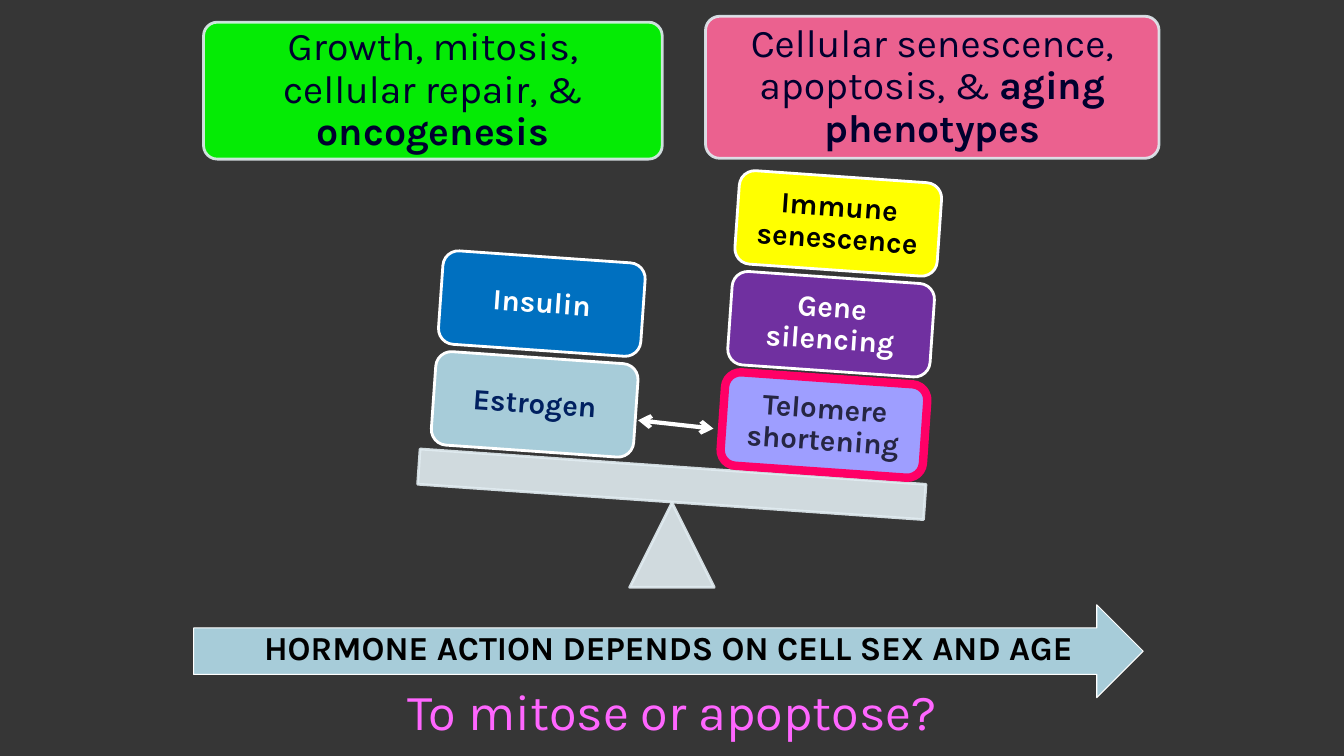
from lxml import etree
from pptx import Presentation
from pptx.dml.color import RGBColor
from pptx.enum.shapes import MSO_CONNECTOR as Link, MSO_SHAPE as Kind
from pptx.enum.text import MSO_ANCHOR as Anchor, PP_ALIGN as Align
from pptx.oxml.ns import qn
from pptx.util import Cm, Pt

FONT = "Karla"
WHITE, PALE, BLUE, NAVY = "FFFFFF", "E1ECF1", "A7CCD9", "00002E"
TILT = 4


def color(text):
    return RGBColor.from_string(text)


class Board:
    def __init__(self, deck, back):
        self.slide = deck.slides.add_slide(deck.slide_layouts[6])
        self.shapes = self.slide.shapes
        fill = self.slide.background.fill
        fill.solid()
        fill.fore_color.rgb = color(back)

    def shape(self, kind, box, fill, line=WHITE, width=2, turn=0, alpha=100):
        item = self.shapes.add_shape(kind, *map(Cm, box))
        item.shadow.inherit = False
        item.rotation = turn
        item.fill.solid()
        item.fill.fore_color.rgb = color(fill)
        item.line.color.rgb = color(line)
        item.line.width = Pt(width)
        if alpha < 100:
            for tone in item.element.spPr.iter(qn("a:srgbClr")):
                etree.SubElement(tone, qn("a:alpha"), val=str(alpha * 1000))
        return item

    def fit(self, item, text, size, ink, bold=False, tail="", pad=None):
        """Centre text in a shape; tail is a closing run in bold."""
        frame = item.text_frame
        frame.word_wrap = True
        para = frame.paragraphs[0]
        para.alignment = Align.CENTER
        font = para.font
        font.name, font.size, font.bold = FONT, Pt(size), bold
        font.color.rgb = color(ink)
        para.add_run().text = text
        if tail:
            run = para.add_run()
            run.text = tail
            run.font.bold = True
        if pad is not None:
            frame.vertical_anchor = Anchor.MIDDLE
            para.line_spacing = 0.9
            frame.margin_left = frame.margin_right = Cm(pad)
            frame.margin_top = frame.margin_bottom = Cm(pad)

    def panel(self, box, fill, text, tail):
        item = self.shape(Kind.ROUNDED_RECTANGLE, box, fill, PALE, alpha=90)
        item.adjustments[0] = 0.1
        self.fit(item, text, 28, NAVY, tail=tail, pad=0.3)

    def stack(self, left, top, blocks):
        """Pile tilted blocks upwards from the lowest one."""
        for step, (text, fill, ink, line, width) in enumerate(blocks):
            box = left + 0.18 * step, top - 2.54 * step, 5.11, 2.36
            item = self.shape(Kind.ROUNDED_RECTANGLE, box, fill, line, width, TILT)
            self.fit(item, text, 21, ink, True, pad=0.23)

    def label(self, box, text, size, ink, bold=False):
        item = self.shapes.add_textbox(*map(Cm, box))
        self.fit(item, text, size, ink, bold)

    def arrow(self, start, end, ink, width):
        """Draw a line with an open arrowhead at both ends."""
        item = self.shapes.add_connector(Link.STRAIGHT, *map(Cm, start + end))
        item.line.color.rgb = color(ink)
        item.line.width = Pt(width)
        props = item.element.spPr
        for tip in ("a:headEnd", "a:tailEnd"):
            etree.SubElement(props.find(qn("a:ln")), qn(tip), type="arrow")
        etree.SubElement(props, qn("a:effectLst"))


def main():
    deck = Presentation()
    deck.slide_width, deck.slide_height = Cm(33.87), Cm(19.05)
    board = Board(deck, "363636")

    board.panel((5.13, 0.56, 11.56, 3.45), "00FF00",
                "Growth, mitosis, cellular repair, & ", "oncogenesis")
    board.panel((17.78, 0.41, 11.43, 3.58), "FF6699",
                "Cellular senescence, apoptosis, & ", "aging phenotypes")

    board.shape(Kind.ISOSCELES_TRIANGLE, (15.87, 12.67, 2.13, 2.13),
                PALE, PALE, alpha=90)
    board.shape(Kind.RECTANGLE, (10.54, 11.76, 12.78, 0.89),
                PALE, PALE, turn=TILT, alpha=90)
    board.stack(18.21, 9.53, [
        ("Telomere shortening", "9E9EFF", "262643", "FF0066", 6),
        ("Gene silencing", "7030A0", WHITE, WHITE, 2),
        ("Immune senescence", "FFFF00", "000000", WHITE, 2),
    ])
    board.stack(10.92, 9.01, [
        ("Estrogen", BLUE, "002060", WHITE, 2),
        ("Insulin", "0070C0", WHITE, WHITE, 2),
    ])

    board.label((4.24, 17.02, 25.4, 1.8), "To mitose or apoptose?", 36, "FF66FF")
    board.shape(Kind.RIGHT_ARROW, (4.88, 15.24, 23.93, 2.34), BLUE, width=0.75)
    board.label((4.88, 15.67, 23.93, 1.3),
                "HORMONE ACTION DEPENDS ON CELL SEX AND AGE", 24, "000000", True)
    board.arrow((16.08, 10.59), (17.98, 10.8), WHITE, 3)

    deck.save("out.pptx")


if __name__ == "__main__":
    main()
